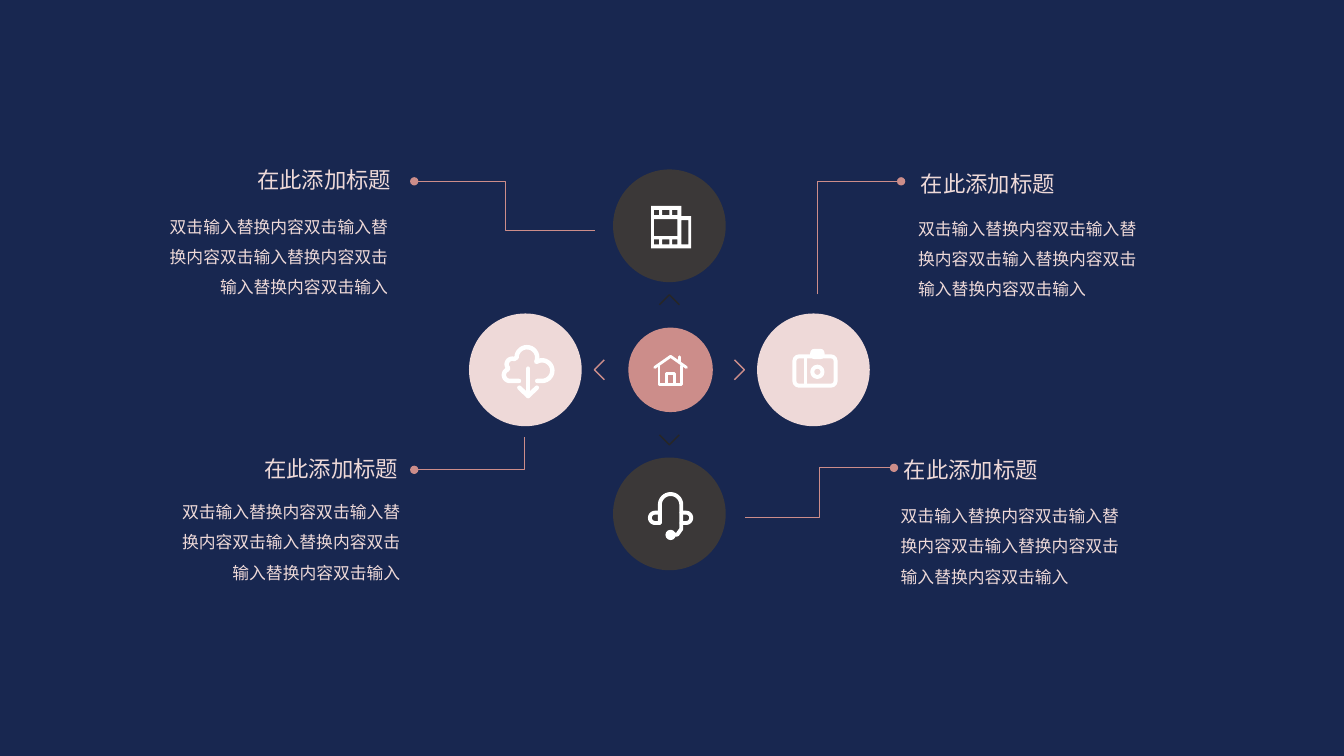
import math

import lxml.etree
import pptx
import pptx.dml.color
import pptx.enum.shapes
import pptx.enum.text
import pptx.oxml.ns
import pptx.util

RGBColor = pptx.dml.color.RGBColor
Cm = pptx.util.Cm
Pt = pptx.util.Pt
SHAPE = pptx.enum.shapes.MSO_SHAPE
ALIGN = pptx.enum.text.PP_ALIGN
qn = pptx.oxml.ns.qn

NAVY = RGBColor(0x18, 0x27, 0x50)
CHARCOAL = RGBColor(0x3B, 0x38, 0x38)
ROSE = RGBColor(0xCC, 0x8D, 0x8A)
BLUSH = RGBColor(0xEE, 0xD9, 0xD8)
BLACK = RGBColor(0x26, 0x26, 0x26)
WHITE = RGBColor(0xFF, 0xFF, 0xFF)

FONT = "Noto Sans CJK SC"
HEADING = "在此添加标题"
BODY = "双击输入替换内容" * 4 + "双击输入"


def arc(x, y, radius, start, end, steps=16):
    """Points along an arc; angles in degrees, clockwise from the right."""
    angles = [math.radians(start + (end - start) * i / steps) for i in range(steps + 1)]
    return [(x + radius * math.cos(a), y + radius * math.sin(a)) for a in angles]


def box(left, top, right, bottom):
    return [(left, top), (right, top), (right, bottom), (left, bottom)]


class Canvas:
    """Draws on one slide; all positions are in centimetres from the origin."""

    def __init__(self, slide):
        self.slide = slide
        self.origin = (0, 0)
        slide.background.fill.solid()
        slide.background.fill.fore_color.rgb = NAVY

    def paint(self, shape, fill=None, line=None, weight=1):
        shape.shadow.inherit = False
        if fill is None:
            shape.fill.background()
        else:
            shape.fill.solid()
            shape.fill.fore_color.rgb = fill
        if line is None:
            shape.line.fill.background()
        else:
            shape.line.color.rgb = line
            shape.line.width = Pt(weight)
        return shape

    def preset(self, kind, x, y, width, height, **style):
        """Preset shape centred on x, y."""
        left, top = self.origin[0] + x - width / 2, self.origin[1] + y - height / 2
        shape = self.slide.shapes.add_shape(kind, Cm(left), Cm(top), Cm(width), Cm(height))
        return self.paint(shape, **style)

    def outline(self, contours, closed, **style):
        dx, dy = self.origin
        contours = [[(Cm(x + dx), Cm(y + dy)) for x, y in c] for c in contours]
        builder = self.slide.shapes.build_freeform(*contours[0][0])
        builder.add_line_segments(contours[0][1:], close=closed)
        for contour in contours[1:]:
            builder.move_to(*contour[0])
            builder.add_line_segments(contour[1:], close=closed)
        return self.paint(builder.convert_to_shape(), **style)

    def stroke(self, points, color=WHITE, weight=2.8, rounded=True, dot_end=False):
        shape = self.outline([points], False, line=color, weight=weight)
        line = shape.line._get_or_add_ln()
        if rounded:
            line.set("cap", "rnd")
            lxml.etree.SubElement(line, qn("a:round"))
        if dot_end:
            lxml.etree.SubElement(line, qn("a:tailEnd"), type="oval")

    def text(self, words, left, top, width, height, size, spacing, align):
        frame = self.slide.shapes.add_textbox(Cm(left), Cm(top), Cm(width), Cm(height)).text_frame
        frame.word_wrap = True
        frame.auto_size = pptx.enum.text.MSO_AUTO_SIZE.SHAPE_TO_FIT_TEXT
        frame.text = words
        paragraph = frame.paragraphs[0]
        paragraph.alignment = align
        paragraph.line_spacing = spacing
        font = paragraph.runs[0].font
        font.name = FONT
        font.size = Pt(size)
        font.color.rgb = BLUSH
        lxml.etree.SubElement(font._element, qn("a:ea"), typeface=FONT)


def film_icon(canvas):
    frame = [(-.46, -.5), (.3, -.5), (.3, -.24), (.55, -.24), (.55, .57), (-.46, .57)]
    perforations = [box(left, top, right, top + .13)
                    for top in (-.4, .34)
                    for left, right in ((-.39, -.26), (-.18, 0), (.07, .2))]
    windows = [box(-.39, -.17, .2, .26), box(.3, -.14, .48, .47)]
    canvas.outline([frame] + perforations + windows, True, fill=WHITE)


def cloud_icon(canvas):
    cloud = [(-.16, .28)] + arc(-.39, .13, .15, 90, 250) + arc(-.33, -.14, .14, 140, 290)
    cloud += arc(.04, -.31, .26, 180, 385) + arc(.42, .02, .26, 240, 450) + [(.3, .28)]
    canvas.stroke(cloud, weight=3.2)
    canvas.stroke([(.07, -.03), (.07, .66)], weight=3.2)
    canvas.stroke([(-.15, .45), (.07, .66), (.29, .45)], weight=3.2)


def camera_icon(canvas):
    body = canvas.preset(SHAPE.ROUNDED_RECTANGLE, .04, .03, 1.04, .74, line=WHITE, weight=2.8)
    body.adjustments[0] = .16
    canvas.stroke([(-.21, -.33), (-.21, .4)], weight=2.2)
    finder = canvas.preset(SHAPE.ROUNDED_RECTANGLE, .1, -.4, .36, .26, fill=WHITE)
    finder.adjustments[0] = .4
    canvas.preset(SHAPE.OVAL, .1, .05, .26, .26, line=WHITE, weight=2.8)


def headset_icon(canvas):
    middle = .03
    canvas.stroke([(-.24, .23)] + arc(middle, -.23, .27, 180, 360)
                  + [(.3, .38), (.2, .52), (middle, .53)])
    ear = [(-.24, -.03)] + arc(-.36, .1, .13, 270, 90) + [(-.24, .23)]
    canvas.stroke(ear)
    canvas.stroke([(2 * middle - x, y) for x, y in ear])
    canvas.preset(SHAPE.OVAL, middle, .53, .26, .26, fill=WHITE)


def house_icon(canvas):
    roof = [(-.37, -.06), (.03, -.34), (.43, -.06)]
    walls = [(-.26, -.1), (-.26, .37), (.31, .37), (.31, -.1)]
    door = [(-.07, .37), (-.07, .09), (.13, .09), (.13, .37)]
    chimney = [(.25, -.33), (.25, -.18)]
    for part in (roof, walls, door, chimney):
        canvas.stroke(part, weight=2)


def main():
    deck = pptx.Presentation()
    deck.slide_width, deck.slide_height = Cm(33.87), Cm(19.05)
    canvas = Canvas(deck.slides.add_slide(deck.slide_layouts[6]))

    # Hub and four discs around it, with a chevron pointing at each disc
    hub_x, hub_y, arm = 16.87, 9.32, 3.63
    discs = [(0, -1, CHARCOAL, BLACK, film_icon), (-1, 0, BLUSH, ROSE, cloud_icon),
             (1, 0, BLUSH, ROSE, camera_icon), (0, 1, CHARCOAL, BLACK, headset_icon)]
    for dx, dy, disc_color, chevron_color, icon in discs:
        canvas.origin = (hub_x, hub_y)
        tip, base, half = 1.89, 1.64, .25
        canvas.stroke([(base * dx + half * dy, base * dy + half * dx), (tip * dx, tip * dy),
                       (base * dx - half * dy, base * dy - half * dx)],
                      chevron_color, 1, rounded=False)
        canvas.origin = (hub_x + arm * dx, hub_y + arm * dy)
        canvas.preset(SHAPE.OVAL, 0, 0, 2.84, 2.84, fill=disc_color)
        icon(canvas)
    canvas.origin = (hub_x, hub_y)
    canvas.preset(SHAPE.OVAL, .03, 0, 2.13, 2.13, fill=ROSE)
    house_icon(canvas)

    # Leader lines ending in a dot beside each heading
    canvas.origin = (0, 0)
    leaders = [[(14.99, 5.82), (12.73, 5.82), (12.73, 4.57), (10.44, 4.57)],
               [(20.6, 7.42), (20.6, 4.57), (22.71, 4.57)],
               [(18.77, 13.03), (20.65, 13.03), (20.65, 11.79), (22.53, 11.79)],
               [(13.23, 11.02), (13.23, 11.84), (10.44, 11.84)]]
    for leader in leaders:
        canvas.stroke(leader, ROSE, .75, rounded=False, dot_end=True)

    # Headings with their body text: heading position, body position, alignment
    notes = [((3.43, 4.06), (3.83, 5.08), ALIGN.RIGHT),
             ((22.96, 4.17), (22.89, 5.13), ALIGN.LEFT),
             ((3.61, 11.35), (4.14, 12.27), ALIGN.RIGHT),
             ((22.53, 11.38), (22.45, 12.37), ALIGN.LEFT)]
    for heading_at, body_at, align in notes:
        canvas.text(HEADING, *heading_at, 6.68, .94, 16, Pt(19), align)
        canvas.text(BODY, *body_at, 6.2, 2.57, 12, 1.5, align)

    deck.save("out.pptx")


if __name__ == "__main__":
    main()
